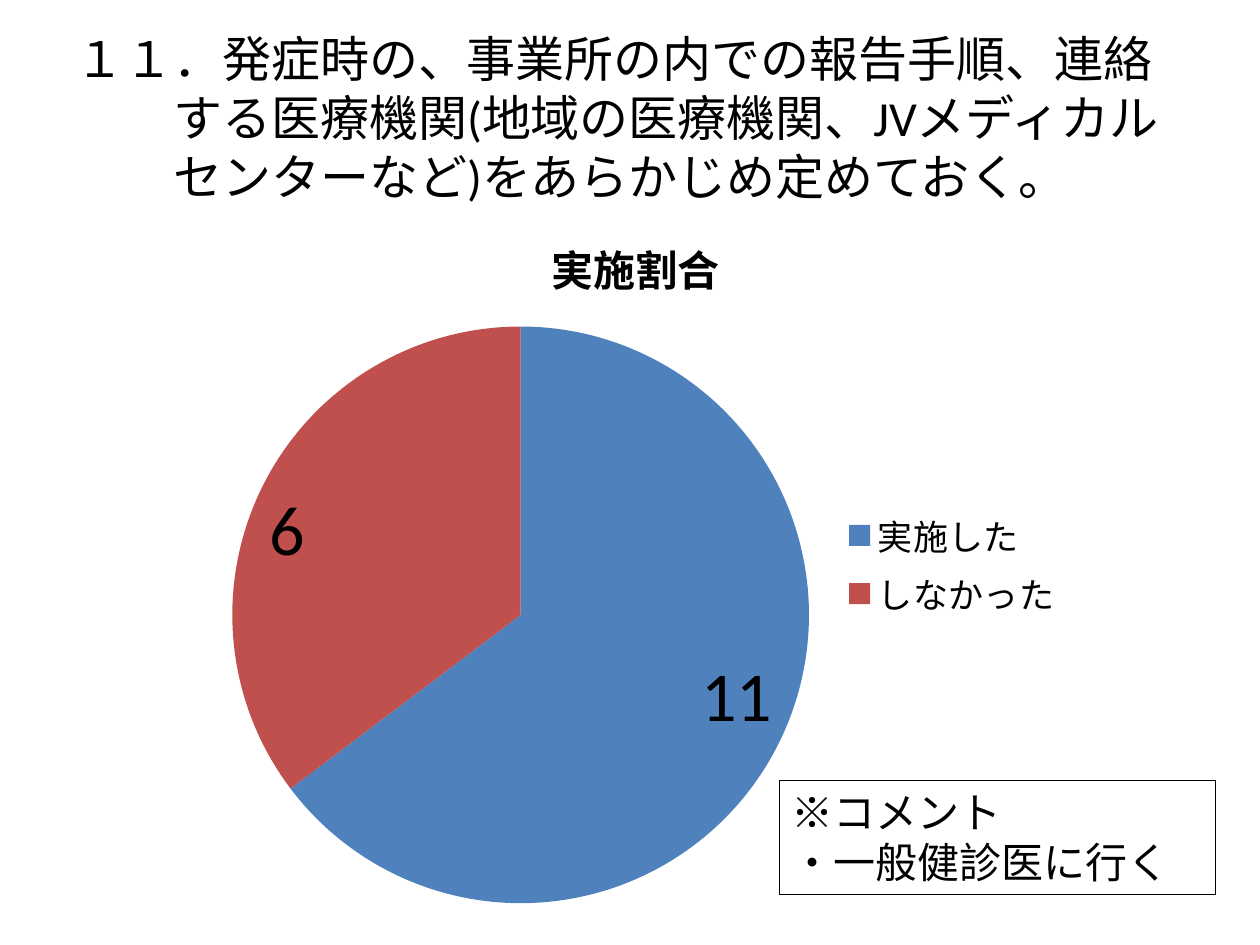
from lxml import etree
from pptx import Presentation
from pptx.chart.data import CategoryChartData
from pptx.dml.color import RGBColor
from pptx.enum.chart import XL_CHART_TYPE as ChartType, XL_LABEL_POSITION as LabelPos
from pptx.enum.chart import XL_LEGEND_POSITION as LegendPos
from pptx.enum.shapes import MSO_SHAPE as Shape
from pptx.enum.text import MSO_ANCHOR as Anchor, MSO_AUTO_SIZE as AutoSize, PP_ALIGN as Align
from pptx.oxml import parse_xml
from pptx.oxml.ns import nsdecls
from pptx.util import Pt

PX = 914400 // 126
FONT = "Calibri"
COLORS = {"text": "000000", "done": "4F81BD", "not_done": "C0504D"}


def write(frame, text, size, bold=False, align=Align.LEFT, anchor=Anchor.MIDDLE):
    frame.word_wrap = True
    frame.vertical_anchor = anchor
    frame.text = text
    for paragraph in frame.paragraphs:
        paragraph.alignment = align
        for run in paragraph.runs:
            run.font.name = FONT
            run.font.size = Pt(size)
            run.font.bold = bold
            run.font.color.rgb = RGBColor.from_string(COLORS["text"])


prs = Presentation()
prs.slide_width, prs.slide_height = 1260 * PX, 945 * PX
slide = prs.slides.add_slide(prs.slide_layouts[5])

# Title with a hanging indent
title = slide.shapes.title
title.left, title.top, title.width, title.height = 63 * PX, 38 * PX, 1134 * PX, 158 * PX
write(title.text_frame,
      "１１．発症時の、事業所の内での報告手順、連絡する医療機関"
      "(地域の医療機関、JVメディカルセンターなど)をあらかじめ定めておく。", size=28)
title.text_frame.auto_size = AutoSize.NONE
indent = title.text_frame.paragraphs[0]._p.get_or_add_pPr()
indent.set("marL", str(98 * PX))
indent.set("indent", str(-98 * PX))

# Pie of the implementation share
share = CategoryChartData()
share.categories = ["実施した", "しなかった"]
share.add_series("実施割合", [11, 6])
chart = slide.shapes.add_chart(
    ChartType.PIE, 194 * PX, 204 * PX, 883 * PX, 721 * PX, share).chart
chart.font.name = FONT
chart.font.size = Pt(20)
chart.font.color.rgb = RGBColor.from_string(COLORS["text"])
chart.has_title = True
write(chart.chart_title.text_frame, "実施割合", size=24, bold=True, align=Align.CENTER)
chart.chart_title.include_in_layout = False
chart.has_legend = True
chart.legend.position = LegendPos.RIGHT
chart.legend.include_in_layout = False

pie = chart.plots[0]
pie.vary_by_categories = True
for i, answer in enumerate(["done", "not_done"]):
    fill = pie.series[0].points[i].format.fill
    fill.solid()
    fill.fore_color.rgb = RGBColor.from_string(COLORS[answer])

pie.has_data_labels = True
counts = pie.data_labels
counts.show_value = True
counts.show_percentage = False
counts.position = LabelPos.INSIDE_END
counts.font.name = FONT
counts.font.size = Pt(40)
counts.font.color.rgb = RGBColor.from_string(COLORS["text"])

# Fixed place of the pie within the chart
plot_area = chart._chartSpace.chart.plotArea
for old_layout in plot_area.findall("{*}layout"):
    plot_area.remove(old_layout)
layout = parse_xml(f'<c:layout {nsdecls("c")}><c:manualLayout/></c:layout>')
settings = {"layoutTarget": "inner", "xMode": "edge", "yMode": "edge",
            "x": "0.04", "y": "0.17", "w": "0.66", "h": "0.8"}
for tag, value in settings.items():
    etree.SubElement(layout[0], f"{{{layout.nsmap['c']}}}{tag}").set("val", value)
plot_area.insert(0, layout)

# Comment box
comment = slide.shapes.add_shape(Shape.RECTANGLE, 779 * PX, 780 * PX, 436 * PX, 114 * PX)
comment.shadow.inherit = False
comment.fill.background()
comment.line.color.rgb = RGBColor.from_string(COLORS["text"])
comment.line.width = Pt(0.25)
write(comment.text_frame, "※コメント\n・一般健診医に行く", size=24, anchor=Anchor.TOP)
comment.text_frame.auto_size = AutoSize.SHAPE_TO_FIT_TEXT

prs.save("out.pptx")
